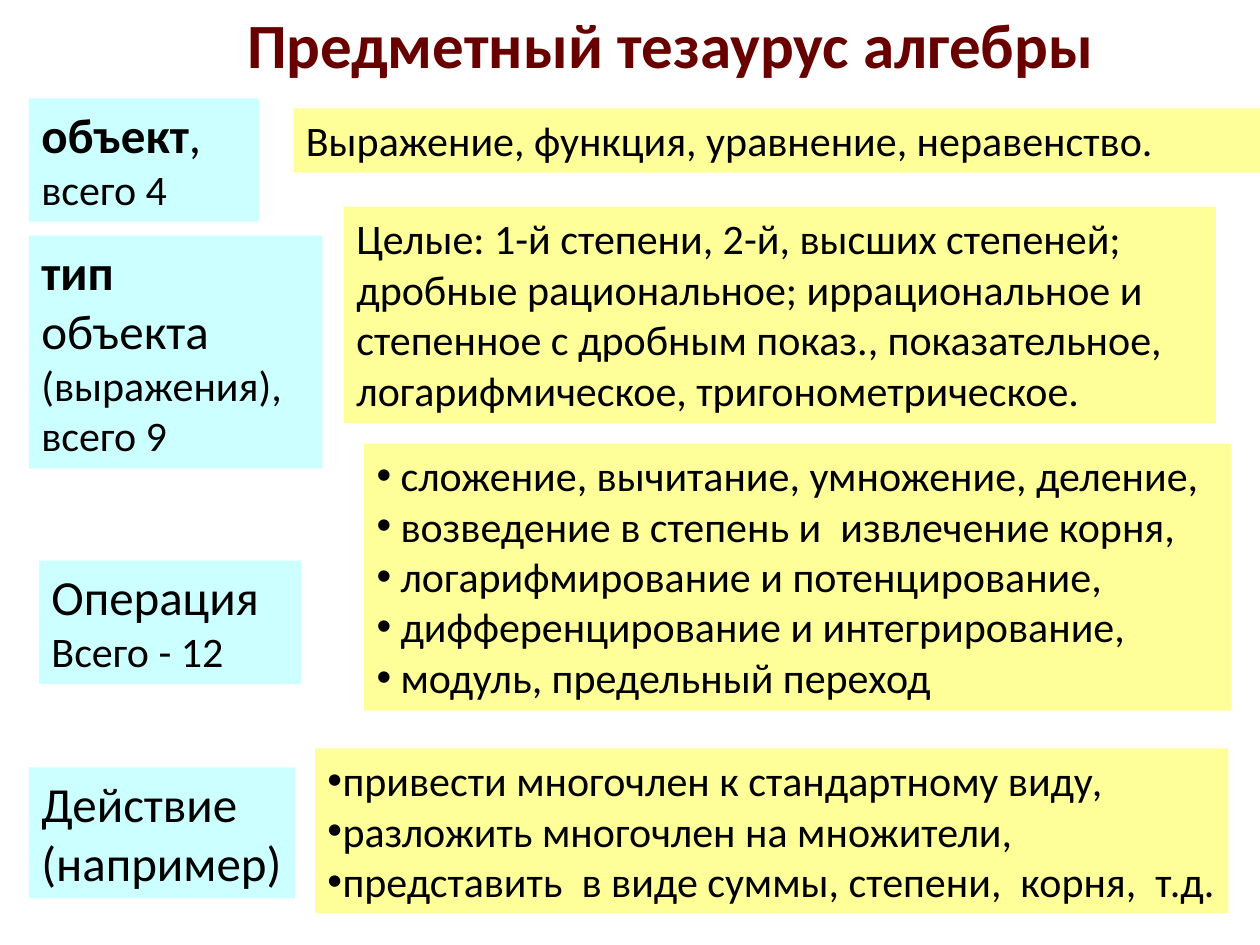
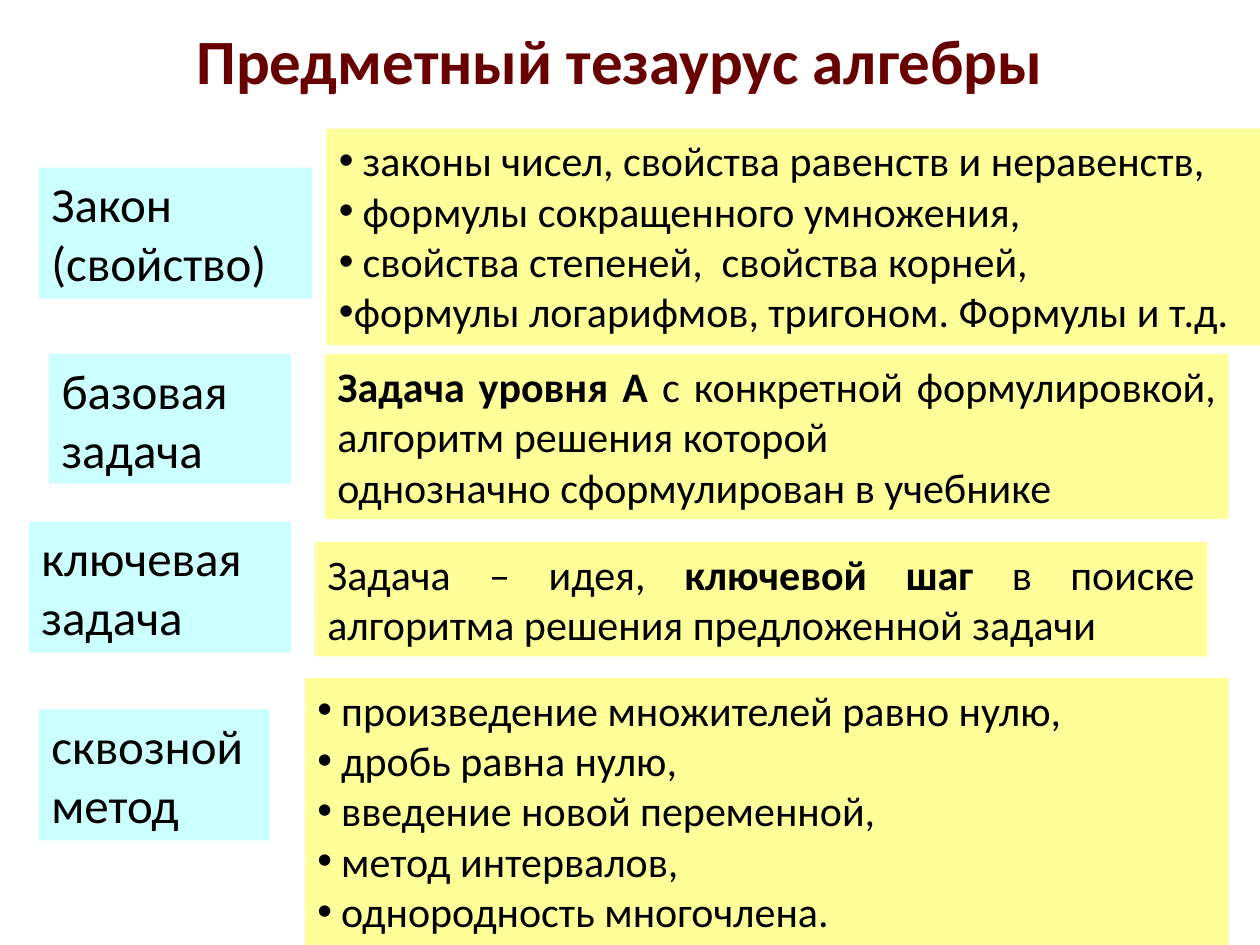
"""Build two slides that set out the subject thesaurus of algebra."""

from dataclasses import dataclass

from lxml.etree import SubElement
from pptx import Presentation
from pptx.dml.color import RGBColor
from pptx.enum.text import MSO_ANCHOR as Anchor, MSO_AUTO_SIZE as AutoSize, PP_ALIGN as Align
from pptx.oxml.ns import qn
from pptx.util import Inches, Pt


@dataclass(frozen=True)
class Theme:
    font: str = "Calibri"
    bullet_font: str = "Arial"
    title_color: RGBColor = RGBColor.from_string("680000")
    text_color: RGBColor = RGBColor.from_string("000000")
    label_fill: RGBColor = RGBColor.from_string("CCFFFF")
    detail_fill: RGBColor = RGBColor.from_string("FFFF99")
    title_size: int = 36
    label_size: int = 28
    detail_size: int = 24
    wide_indent: float = 0.19
    tight_indent: float = 0.12


@dataclass(frozen=True)
class Run:
    text: str
    size: int | None = None
    bold: bool | None = None


@dataclass(frozen=True)
class Line:
    runs: tuple
    indent: float = 0
    align: Align = Align.LEFT


THEME = Theme()


def bold(text):
    return Run(text, bold=True)


def small(text):
    return Run(text, size=THEME.detail_size)


def line(*parts, **options):
    return Line(tuple(Run(part) if isinstance(part, str) else part for part in parts), **options)


def justified(*parts):
    return line(*parts, align=Align.JUSTIFY)


def bullets(*texts, indent=THEME.wide_indent):
    return [line(text, indent=indent) for text in texts]


TITLE = "Предметный тезаурус алгебры"

SLIDES = [
    {
        "title_box": (1.06, 0, 8.52, 0.69),
        "rows": [
            ((0.23, 0.78, 1.83, 0.98), [line(bold("объект"), ", ", small("всего 4"))],
             (2.33, 0.86, 7.67, 0.51), [line("Выражение, функция, уравнение, неравенство.")]),
            ((0.23, 1.87, 2.33, 1.85),
             [line(bold("тип")), line("объекта ", small("(выражения),")), line(small("всего 9"))],
             (2.73, 1.64, 6.92, 1.72),
             [line("Целые: 1-й степени, 2-й, высших степеней;"),
              line("дробные рациональное; иррациональное и"),
              line("степенное с дробным показ., показательное, "
                   "логарифмическое, тригонометрическое.")]),
            ((0.31, 4.45, 2.08, 0.98), [line("Операция"), line(small("Всего - 12"))],
             (2.89, 3.52, 6.88, 2.12),
             bullets("сложение, вычитание, умножение, деление,",
                     "возведение в степень и  извлечение корня,",
                     "логарифмирование и потенцирование,",
                     "дифференцирование и интегрирование,",
                     "модуль, предельный переход")),
            ((0.23, 6.09, 2.11, 1.04), [line("Действие"), line("(например)")],
             (2.5, 5.94, 7.25, 1.31),
             bullets("привести многочлен к стандартному виду,",
                     "разложить многочлен на множители,",
                     "представить  в виде суммы, степени,  корня,  т.д.",
                     indent=THEME.tight_indent)),
        ],
    },
    {
        "title_box": (0.92, 0, 8, 0.94),
        "rows": [
            ((0.31, 1.33, 2.17, 1.04), [line("Закон (свойство)")],
             (2.59, 1.02, 7.41, 1.72),
             bullets("законы чисел, свойства равенств и неравенств,",
                     "формулы сокращенного умножения,",
                     "свойства степеней,  свойства корней,")
             + bullets("формулы логарифмов, тригоном. Формулы и т.д.",
                       indent=THEME.tight_indent)),
            ((0.39, 2.81, 1.92, 1.03), [line("базовая задача")],
             (2.58, 2.81, 7.17, 1.31),
             [justified(bold("Задача уровня А "),
                        "с конкретной формулировкой, алгоритм решения которой"),
              justified("однозначно сформулирован в учебнике")]),
            ((0.23, 4.14, 2.08, 1.04), [line("ключевая задача")],
             (2.5, 4.3, 7.08, 0.91),
             [justified("Задача – идея, ", bold("ключевой шаг "),
                        "в поиске алгоритма решения предложенной задачи")]),
            ((0.31, 5.63, 1.83, 1.04), [line("сквозной метод")],
             (2.42, 5.38, 7.33, 2.12),
             bullets("произведение множителей равно нулю,",
                     "дробь равна нулю,",
                     "введение новой переменной,",
                     "метод интервалов,",
                     "однородность многочлена.")),
        ],
    },
]


def set_bullet(paragraph, indent):
    properties = paragraph._p.get_or_add_pPr()
    properties.set("marL", str(Inches(indent)))
    properties.set("indent", str(-Inches(indent)))
    SubElement(properties, qn("a:buFont")).set("typeface", THEME.bullet_font)
    SubElement(properties, qn("a:buChar")).set("char", "•")


def write_line(paragraph, content, size, color):
    paragraph.alignment = content.align
    if content.indent:
        set_bullet(paragraph, content.indent)
    paragraph.font.name = THEME.font
    paragraph.font.size = Pt(size)
    paragraph.font.color.rgb = color
    for part in content.runs:
        run = paragraph.add_run()
        run.text = part.text
        if part.size:
            run.font.size = Pt(part.size)
        if part.bold:
            run.font.bold = True


def add_text(slide, box, lines, size, color=THEME.text_color):
    shape = slide.shapes.add_textbox(*map(Inches, box))
    frame = shape.text_frame
    frame.word_wrap = True
    for index, content in enumerate(lines):
        paragraph = frame.add_paragraph() if index else frame.paragraphs[0]
        write_line(paragraph, content, size, color)
    return shape


def add_title(slide, box):
    heading = [line(bold(TITLE), align=Align.CENTER)]
    shape = add_text(slide, box, heading, THEME.title_size, THEME.title_color)
    shape.text_frame.vertical_anchor = Anchor.MIDDLE


def add_panel(slide, box, lines, size, fill):
    shape = add_text(slide, box, lines, size)
    shape.text_frame.auto_size = AutoSize.SHAPE_TO_FIT_TEXT
    shape.fill.solid()
    shape.fill.fore_color.rgb = fill


def main():
    presentation = Presentation()
    presentation.slide_width, presentation.slide_height = Inches(10), Inches(7.5)
    blank_layout = presentation.slide_layouts[6]
    for content in SLIDES:
        slide = presentation.slides.add_slide(blank_layout)
        add_title(slide, content["title_box"])
        for label_box, label, detail_box, detail in content["rows"]:
            add_panel(slide, label_box, label, THEME.label_size, THEME.label_fill)
            add_panel(slide, detail_box, detail, THEME.detail_size, THEME.detail_fill)
    presentation.save("out.pptx")


if __name__ == "__main__":
    main()
